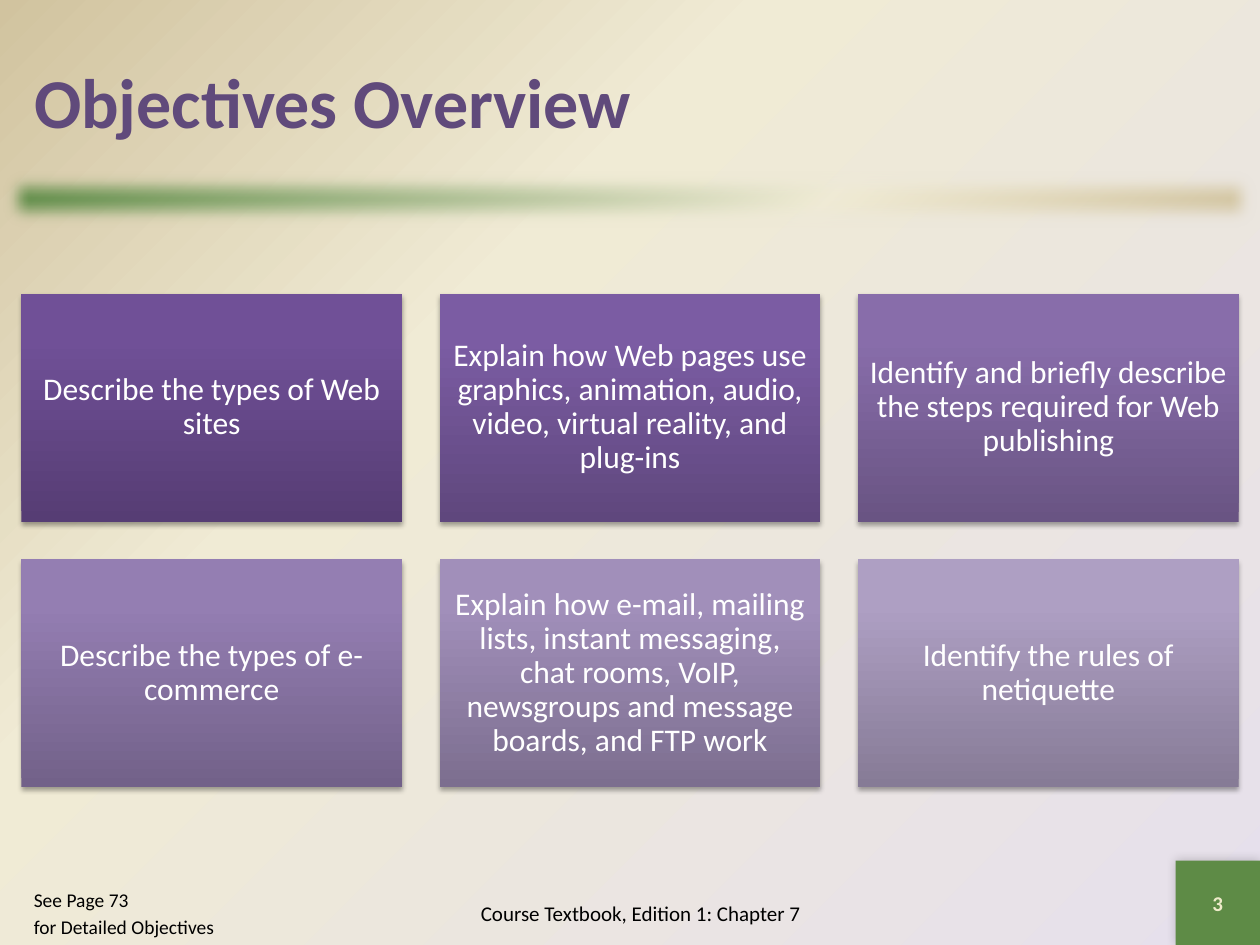
from lxml import etree
from pptx import Presentation
from pptx.dml.color import RGBColor
from pptx.enum.shapes import MSO_SHAPE as Shape
from pptx.enum.text import MSO_ANCHOR as Anchor, PP_ALIGN as Align
from pptx.oxml.ns import qn
from pptx.util import Inches, Pt

FONT = "Calibri"
GREEN = RGBColor(0x5E, 0x8B, 0x46)
CREAM = RGBColor(0xF0, 0xEB, 0xD5)
TAN = RGBColor(0xD1, 0xC3, 0x9F)
LAVENDER = RGBColor(0xE6, 0xE0, 0xEC)
PURPLE = RGBColor(0x60, 0x4A, 0x7B)
PALE = RGBColor(0xEE, 0xEB, 0xCA)
WHITE = RGBColor(0xFF, 0xFF, 0xFF)
BLACK = RGBColor(0, 0, 0)

OBJECTIVES = [
    ("Describe the types of Web sites",
     RGBColor(0x56, 0x3D, 0x74), RGBColor(0x70, 0x50, 0x97), RGBColor(0x70, 0x4F, 0x99)),
    ("Explain how Web pages use graphics, animation, audio, video, virtual reality, and plug-ins",
     RGBColor(0x5F, 0x47, 0x7D), RGBColor(0x7B, 0x5C, 0xA3), RGBColor(0x7C, 0x5B, 0xA5)),
    ("Identify and briefly describe the steps required for Web publishing",
     RGBColor(0x69, 0x54, 0x83), RGBColor(0x88, 0x6D, 0xAA), RGBColor(0x88, 0x6D, 0xAC)),
    ("Describe the types of e-commerce",
     RGBColor(0x72, 0x61, 0x89), RGBColor(0x94, 0x7E, 0xB2), RGBColor(0x95, 0x7E, 0xB4)),
    ("Explain how e-mail, mailing lists, instant messaging, chat rooms, VoIP, "
     "newsgroups and message boards, and FTP work",
     RGBColor(0x7C, 0x6E, 0x8F), RGBColor(0xA1, 0x8F, 0xBA), RGBColor(0xA1, 0x8F, 0xBC)),
    ("Identify the rules of netiquette",
     RGBColor(0x86, 0x7B, 0x96), RGBColor(0xAE, 0x9F, 0xC3), RGBColor(0xAE, 0x9F, 0xC4)),
]


def add_child(parent, tag, **attributes):
    values = {name: str(value) for name, value in attributes.items()}
    return etree.SubElement(parent, qn(tag), values)


def set_gradient(properties, stops, angle=None):
    gradient = etree.Element(qn("a:gradFill"), rotWithShape="1")
    stop_list = add_child(gradient, "a:gsLst")
    for position, color in stops:
        stop = add_child(stop_list, "a:gs", pos=position * 1000)
        add_child(stop, "a:srgbClr", val=color)
    if angle is None:
        path = add_child(gradient, "a:path", path="circle")
        add_child(path, "a:fillToRect", l=100000, t=100000)
        add_child(gradient, "a:tileRect", r=-100000, b=-100000)
    else:
        add_child(gradient, "a:lin", ang=angle * 60000, scaled=0)
    properties.replace(properties.find(qn("a:solidFill")), gradient)


def add_effect(shape, tag, **attributes):
    effects = shape._element.spPr.find(qn("a:effectLst"))
    return add_child(effects, tag, **attributes)


def add_shadow(shape, alpha, blur, distance, angle):
    shadow = add_effect(shape, "a:outerShdw", blurRad=Pt(blur), dist=Pt(distance),
                        dir=angle * 60000, algn="ctr", rotWithShape=0)
    color = add_child(shadow, "a:srgbClr", val=BLACK)
    add_child(color, "a:alpha", val=alpha * 1000)


def add_rectangle(slide, box, color):
    shape = slide.shapes.add_shape(Shape.RECTANGLE, *box)
    shape.shadow.inherit = False
    shape.fill.solid()
    shape.fill.fore_color.rgb = color
    shape.line.fill.background()
    return shape


def write_text(shape, text, size, color, bold=False, align=Align.CENTER,
               anchor=Anchor.MIDDLE, line_spacing=None, gap=0, inset=None):
    frame = shape.text_frame
    frame.word_wrap = True
    frame.vertical_anchor = anchor
    if inset is not None:
        frame.margin_left = frame.margin_right = inset
        frame.margin_top = frame.margin_bottom = inset
    frame.text = text
    for index, paragraph in enumerate(frame.paragraphs):
        paragraph.alignment = align
        if line_spacing:
            paragraph.line_spacing = line_spacing
        if index:
            paragraph.space_before = Pt(gap)
        font = paragraph.font
        font.name, font.size, font.bold = FONT, Pt(size), bold
        font.color.rgb = color


def set_background(slide):
    slide.background.fill.solid()
    properties = slide._element.find(".//" + qn("p:bgPr"))
    set_gradient(properties, [(0, LAVENDER), (65, CREAM), (100, TAN)])


def place_title(slide, box):
    title = slide.shapes.title
    title.left, title.top, title.width, title.height = box
    write_text(title, "Objectives Overview", 40, PURPLE, bold=True, align=Align.LEFT)


def add_divider(slide, box):
    band = add_rectangle(slide, box, GREEN)
    set_gradient(band._element.spPr, [(0, GREEN), (65, CREAM), (100, TAN)], 45)
    add_effect(band, "a:softEdge", rad=Pt(10))


def add_objectives(slide, box, columns=3, rows=2, gap=Inches(0.3)):
    left, top, width, height = box
    card_width = (width - gap * (columns - 1)) // columns
    card_height = (height - gap * (rows - 1)) // rows
    for index, (text, dark, middle, light) in enumerate(OBJECTIVES):
        row, column = divmod(index, columns)
        card = add_rectangle(slide, (left + column * (card_width + gap),
                                     top + row * (card_height + gap),
                                     card_width, card_height), dark)
        set_gradient(card._element.spPr, [(0, dark), (80, middle), (100, light)], 270)
        add_shadow(card, 35, 3.1, 1.8, 90)
        write_text(card, text, 18, WHITE, line_spacing=0.9, inset=Inches(0.07))


def add_footer(slide, box):
    left, top, width, height = box
    note = slide.shapes.add_textbox(left, top, Inches(1.83), height)
    write_text(note, "See Page 73\nfor Detailed Objectives", 11.1, BLACK,
               align=Align.LEFT, anchor=Anchor.TOP, gap=2.2)
    chapter = slide.shapes.add_textbox(Inches(3), top, Inches(4.17), height)
    write_text(chapter, "Course Textbook, Edition 1: Chapter 7", 12, BLACK)
    side = Inches(0.67)
    number = add_rectangle(slide, (left + width - side, top + height - side, side, side), GREEN)
    add_shadow(number, 20, 6, 0, 225)
    write_text(number, "3", 12, PALE, bold=True)


def main():
    presentation = Presentation()
    presentation.slide_width, presentation.slide_height = Inches(10), Inches(7.5)
    slide = presentation.slides.add_slide(presentation.slide_layouts[5])
    set_background(slide)
    add_divider(slide, (0, Inches(1.33), Inches(10), Inches(0.5)))
    place_title(slide, (Inches(0.17), Inches(0.17), Inches(9.67), Inches(1.25)))
    add_objectives(slide, (Inches(0.17), Inches(2.33), Inches(9.66), Inches(3.92)))
    add_footer(slide, (Inches(0.17), Inches(7), Inches(9.83), Inches(0.5)))
    presentation.save("out.pptx")


if __name__ == "__main__":
    main()
